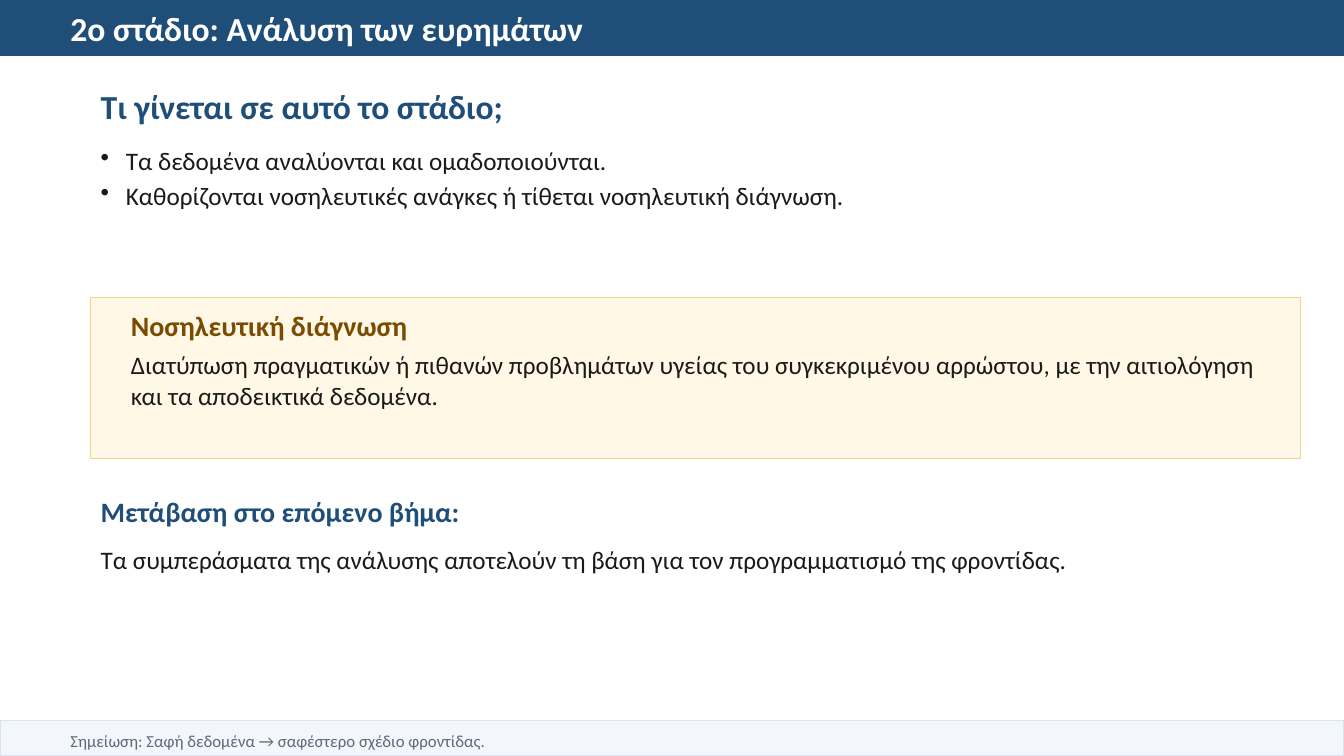
from lxml import etree
from pptx import Presentation
from pptx.dml.color import RGBColor
from pptx.enum import shapes as sh, text as tx
from pptx.oxml.ns import qn
from pptx.util import Inches, Pt

NAVY, INK = "1F4E79", "1A1A1A"
WIDTH = 13.33


def color(code):
    return RGBColor.from_string(code)


def add_panel(slide, box, fill, line):
    panel = slide.shapes.add_shape(
        sh.MSO_SHAPE.RECTANGLE, *[Inches(n) for n in box])
    panel.shadow.inherit = False
    panel.fill.solid()
    panel.fill.fore_color.rgb = color(fill)
    panel.line.color.rgb = color(line)
    panel.line.width = Pt(1)


def add_bullet(para):
    props = para._p.get_or_add_pPr()
    props.set("marL", str(Inches(0.25)))
    props.set("indent", str(-Inches(0.25)))
    etree.SubElement(props, qn("a:buChar")).set("char", "•")
    para.line_spacing = 1.15


def add_text(slide, box, lines, size, code, bold=False, middle=True,
             bullets=False):
    frame = slide.shapes.add_textbox(*[Inches(n) for n in box]).text_frame
    frame.word_wrap = True
    anchor = tx.MSO_ANCHOR
    frame.vertical_anchor = anchor.MIDDLE if middle else anchor.TOP
    frame.text = "\n".join(lines)
    for para in frame.paragraphs:
        if bullets:
            add_bullet(para)
        font = para.font
        font.name = "Calibri"
        font.size = Pt(size)
        font.bold = bold
        font.color.rgb = color(code)


def main():
    deck = Presentation()
    deck.slide_width, deck.slide_height = Inches(WIDTH), Inches(7.5)
    slide = deck.slides.add_slide(deck.slide_layouts[6])

    # Title bar
    add_panel(slide, (0, 0, WIDTH, 0.55), NAVY, NAVY)
    add_text(slide, (0.6, 0.08, 12.13, 0.4),
             ["2ο στάδιο: Ανάλυση των ευρημάτων"], 24, "FFFFFF", bold=True)

    # What happens at this stage
    add_text(slide, (0.9, 0.85, 12, 0.4),
             ["Τι γίνεται σε αυτό το στάδιο;"], 24, NAVY, bold=True)
    add_text(slide, (0.9, 1.35, 12, 1.4),
             ["Τα δεδομένα αναλύονται και ομαδοποιούνται.",
              "Καθορίζονται νοσηλευτικές ανάγκες ή τίθεται νοσηλευτική "
              "διάγνωση."],
             18, INK, middle=False, bullets=True)

    # Definition panel
    add_panel(slide, (0.9, 2.95, 12, 1.6), "FFF8E6", "F2D58A")
    add_text(slide, (1.2, 3.05, 11.4, 0.35),
             ["Νοσηλευτική διάγνωση"], 20, "7A4B00", bold=True)
    add_text(slide, (1.2, 3.42, 11.4, 1.05),
             ["Διατύπωση πραγματικών ή πιθανών προβλημάτων υγείας του "
              "συγκεκριμένου αρρώστου, με την αιτιολόγηση και τα "
              "αποδεικτικά δεδομένα."],
             18, INK, middle=False)

    # Next step
    add_text(slide, (0.9, 4.9, 12, 0.35),
             ["Μετάβαση στο επόμενο βήμα:"], 20, NAVY, bold=True)
    add_text(slide, (0.9, 5.25, 12, 0.6),
             ["Τα συμπεράσματα της ανάλυσης αποτελούν τη βάση για τον "
              "προγραμματισμό της φροντίδας."], 18, INK)

    # Footer note
    add_panel(slide, (0, 7.15, WIDTH, 0.35), "F3F6FA", "D9E2EF")
    add_text(slide, (0.6, 7.22, 12.13, 0.25),
             ["Σημείωση: Σαφή δεδομένα → σαφέστερο σχέδιο φροντίδας."],
             12, "5A6B7A")

    deck.save("out.pptx")


if __name__ == "__main__":
    main()
